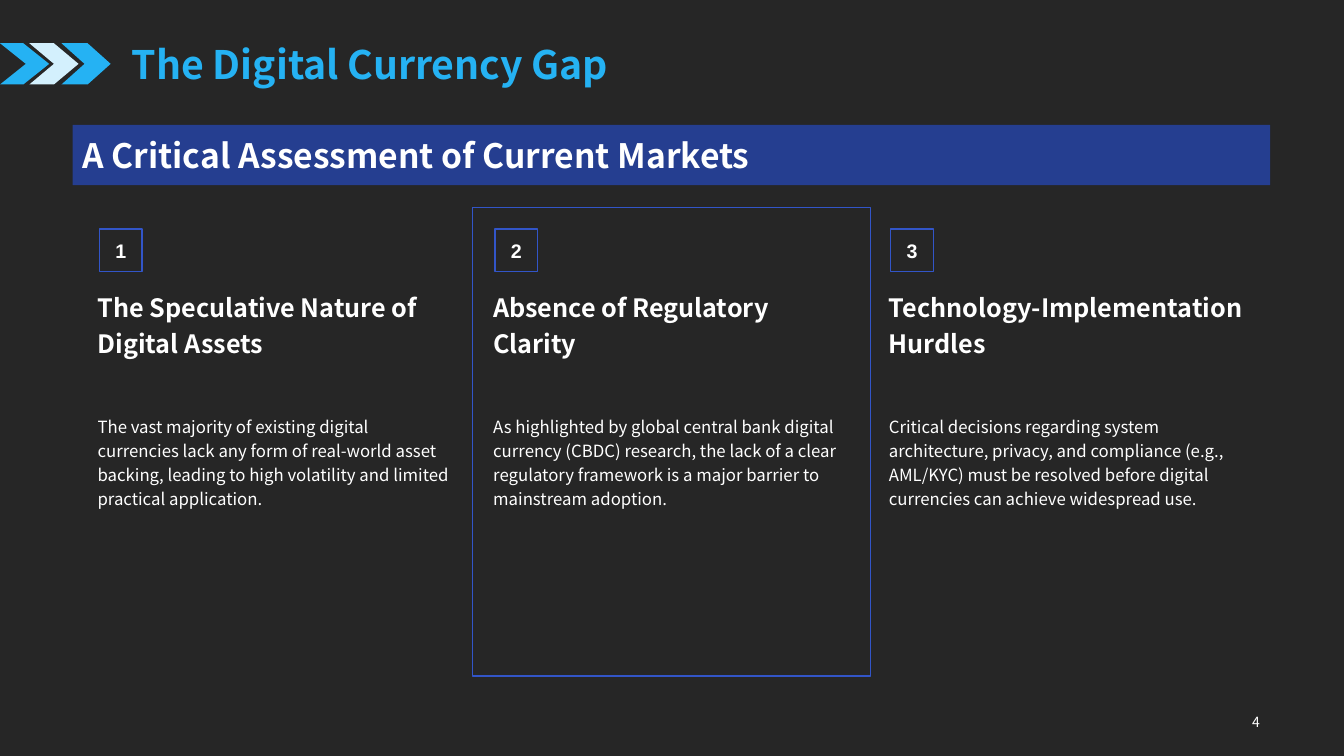
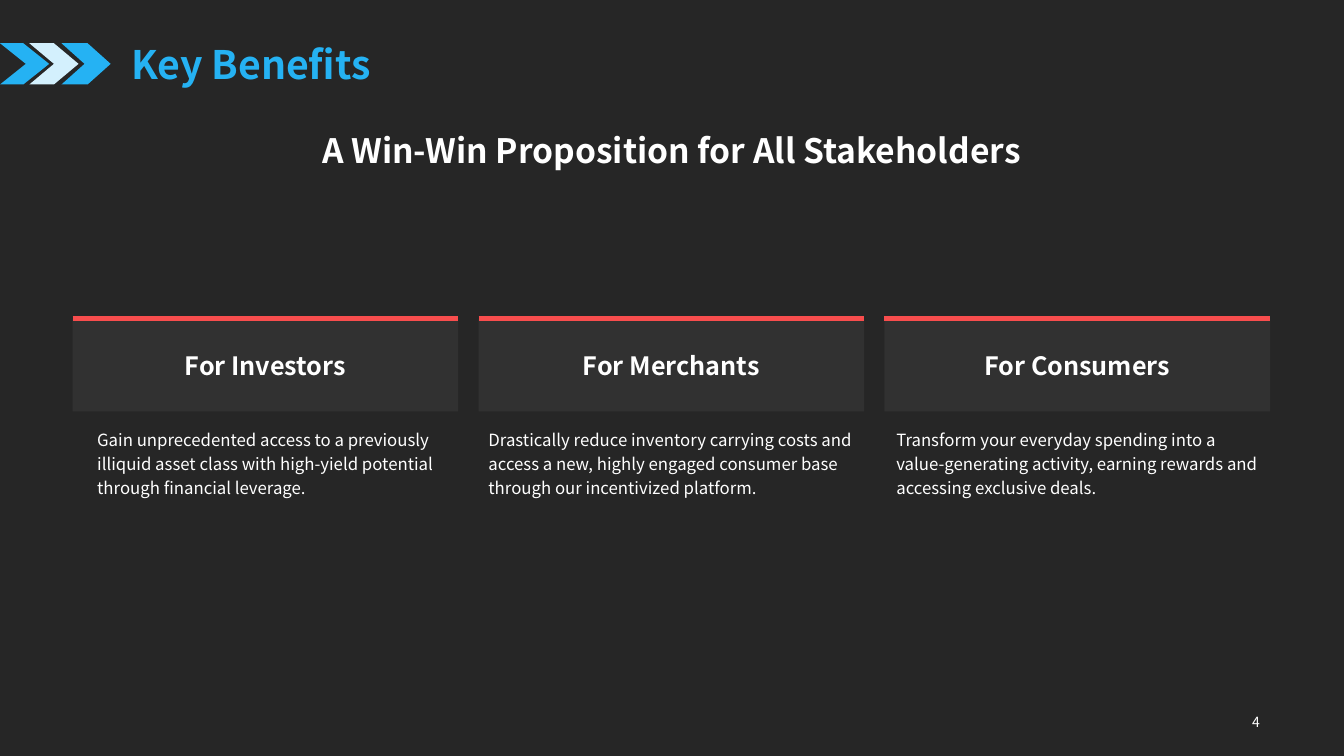
from dataclasses import dataclass
from typing import Any

from lxml import etree
from pptx import Presentation
from pptx import util as u
from pptx.dml import color as c
from pptx.enum import shapes as s
from pptx.enum import text as t
from pptx.oxml import ns

COLOURS = {
    "ground": "262626",
    "accent": "25B2F3",
    "pale": "D3F0FD",
    "band": "254096",
    "outline": "3255C8",
    "red": "F84D4D",
    "white": "FFFFFF",
}
FONT = "Noto Sans CJK SC"
LEFT, WIDTH, COUNT = 1.83, 30.18, 3
GAP = 0.51
CARD_WIDTH = (WIDTH - GAP * (COUNT - 1)) / COUNT
COLUMN_PITCH = 9.97
MIDDLE = t.MSO_ANCHOR.MIDDLE
CENTRE = t.PP_ALIGN.CENTER
RIGHT = t.PP_ALIGN.RIGHT


@dataclass(frozen=True)
class Area:
    left: float
    top: float
    width: float
    height: float

    def lengths(self) -> tuple[u.Length, ...]:
        return tuple(u.Cm(n) for n in (self.left, self.top, self.width, self.height))


@dataclass(frozen=True)
class Style:
    size: float
    bold: bool = False
    colour: str = "white"
    font: str = FONT
    align: Any = None
    anchor: Any = t.MSO_ANCHOR.TOP
    spacing: float | None = None
    wrap: bool = True


@dataclass(frozen=True)
class Chevron:
    left: float
    point: float
    colour: str


@dataclass(frozen=True)
class Topic:
    heading: str
    body: str
    inset: float = 0.25


TITLE = Style(28, bold=True, colour="accent", anchor=MIDDLE)
NUMBER = Style(10, align=RIGHT, anchor=MIDDLE)
BAND = Style(24, bold=True, anchor=MIDDLE)
SUBTITLE = Style(24, bold=True, align=CENTRE)
BADGE = Style(14, bold=True, font="Arial", align=CENTRE, anchor=MIDDLE, wrap=False)
HEADING = Style(18, bold=True, spacing=1.2)
CARD = Style(18, bold=True, align=CENTRE, anchor=MIDDLE)
BODY = Style(12, spacing=1.2)

BAND_AREA = Area(LEFT, 3.15, WIDTH, 1.52)
CHEVRONS = (
    Chevron(1.55, 0.559, "accent"),
    Chevron(0.74, 0.597, "pale"),
    Chevron(0, 0.626, "accent"),
)
GAPS = (
    Topic(
        "The Speculative Nature of Digital Assets",
        "The vast majority of existing digital currencies lack any form of real-world "
        "asset backing, leading to high volatility and limited practical application.",
    ),
    Topic(
        "Absence of Regulatory Clarity",
        "As highlighted by global central bank digital currency (CBDC) research, the lack "
        "of a clear regulatory framework is a major barrier to mainstream adoption.",
    ),
    Topic(
        "Technology-Implementation Hurdles",
        "Critical decisions regarding system architecture, privacy, and compliance (e.g., "
        "AML/KYC) must be resolved before digital currencies can achieve widespread use.",
    ),
)
BENEFITS = (
    Topic(
        "For Investors",
        "Gain unprecedented access to a previously illiquid asset class with high-yield "
        "potential through financial leverage.",
        inset=0.62,
    ),
    Topic(
        "For Merchants",
        "Drastically reduce inventory carrying costs and access a new, highly engaged "
        "consumer base through our incentivized platform.",
    ),
    Topic(
        "For Consumers",
        "Transform your everyday spending into a value-generating activity, earning "
        "rewards and accessing exclusive deals.",
        inset=0.3,
    ),
)


def rgb(name: str) -> c.RGBColor:
    return c.RGBColor.from_string(COLOURS[name])


def set_all(target: Any, values: dict[str, Any]) -> None:
    for name, value in values.items():
        setattr(target, name, value)


def write(box: Any, words: str, style: Style, inset: float = 0.25) -> None:
    frame = box.text_frame
    set_all(frame, {
        "word_wrap": style.wrap,
        "vertical_anchor": style.anchor,
        "margin_left": u.Cm(inset),
        "margin_right": u.Cm(0.25),
        "margin_top": u.Cm(0.13),
        "margin_bottom": u.Cm(0.13),
    })
    para = frame.paragraphs[0]
    set_all(para, {
        "alignment": style.align or t.PP_ALIGN.LEFT,
        "line_spacing": style.spacing,
    })
    span = para.add_run()
    span.text = words
    set_all(span.font, {"size": u.Pt(style.size), "bold": style.bold, "name": style.font})
    span.font.color.rgb = rgb(style.colour)


def add_text(page: Any, area: Area, words: str, style: Style, inset: float = 0.25) -> None:
    write(page.shapes.add_textbox(*area.lengths()), words, style, inset)


def add_box(page: Any, area: Area, fill: str | None = None, opacity: int = 100,
            line: str | None = None, kind: Any = s.MSO_SHAPE.RECTANGLE) -> Any:
    box = page.shapes.add_shape(kind, *area.lengths())
    box.shadow.inherit = False
    if fill:
        box.fill.solid()
        box.fill.fore_color.rgb = rgb(fill)
        if opacity < 100:
            tint = box.fill._xPr.find(".//" + ns.qn("a:srgbClr"))
            etree.SubElement(tint, ns.qn("a:alpha"), val=str(opacity * 1000))
    else:
        box.fill.background()
    if line:
        box.line.color.rgb = rgb(line)
        box.line.width = u.Pt(1)
    else:
        box.line.fill.background()
    return box


def add_rule(page: Any, left: float, top: float, width: float) -> None:
    rule = page.shapes.add_connector(
        s.MSO_CONNECTOR.STRAIGHT, u.Cm(left), u.Cm(top), u.Cm(left + width), u.Cm(top))
    rule.line.color.rgb = rgb("red")
    rule.line.width = u.Pt(4)
    etree.SubElement(rule._element.spPr, ns.qn("a:effectLst"))


def add_page(deck: Any, title: str) -> Any:
    page = deck.slides.add_slide(deck.slide_layouts[6])
    for chevron in CHEVRONS:
        arrow = add_box(page, Area(chevron.left, 1.09, 1.24, 1.04),
                        fill=chevron.colour, kind=s.MSO_SHAPE.CHEVRON)
        arrow.adjustments[0] = chevron.point
    add_text(page, Area(3.07, 0.36, 28.93, 2.49), title, TITLE)
    add_text(page, Area(21.84, 17.81, 10.16, 0.76), "4", NUMBER)
    return page


def draw_gap(deck: Any) -> None:
    page = add_page(deck, "The Digital Currency Gap")
    add_box(page, Area(11.91, 5.23, 10.03, 11.81), line="outline")
    band = add_box(page, BAND_AREA, fill="band", opacity=95)
    write(band, "A Critical Assessment of Current Markets", BAND)
    for index, topic in enumerate(GAPS):
        left = 2.21 + index * COLUMN_PITCH
        badge = add_box(page, Area(left + 0.3, 5.77, 1.07, 1.07), line="outline")
        write(badge, str(index + 1), BADGE)
        add_text(page, Area(left, 7.09, 9.47, 3.18), topic.heading, HEADING)
        add_text(page, Area(left, 10.26, 9.47, 6.78), topic.body, BODY)


def draw_benefits(deck: Any) -> None:
    page = add_page(deck, "Key Benefits")
    add_text(page, BAND_AREA, "A Win-Win Proposition for All Stakeholders", SUBTITLE)
    for index, topic in enumerate(BENEFITS):
        left = LEFT + index * (CARD_WIDTH + GAP)
        card = add_box(page, Area(left, 8.03, CARD_WIDTH, 2.34), fill="white", opacity=5)
        write(card, topic.heading, CARD)
        add_rule(page, left, 8.03, CARD_WIDTH)
        add_text(page, Area(left, 10.59, CARD_WIDTH, 6.45), topic.body, BODY, topic.inset)


def main() -> None:
    deck = Presentation()
    set_all(deck, {"slide_width": u.Cm(33.87), "slide_height": u.Cm(19.05)})
    ground = deck.slide_master.background.fill
    ground.solid()
    ground.fore_color.rgb = rgb("ground")
    draw_gap(deck)
    draw_benefits(deck)
    deck.save("out.pptx")


if __name__ == "__main__":
    main()
